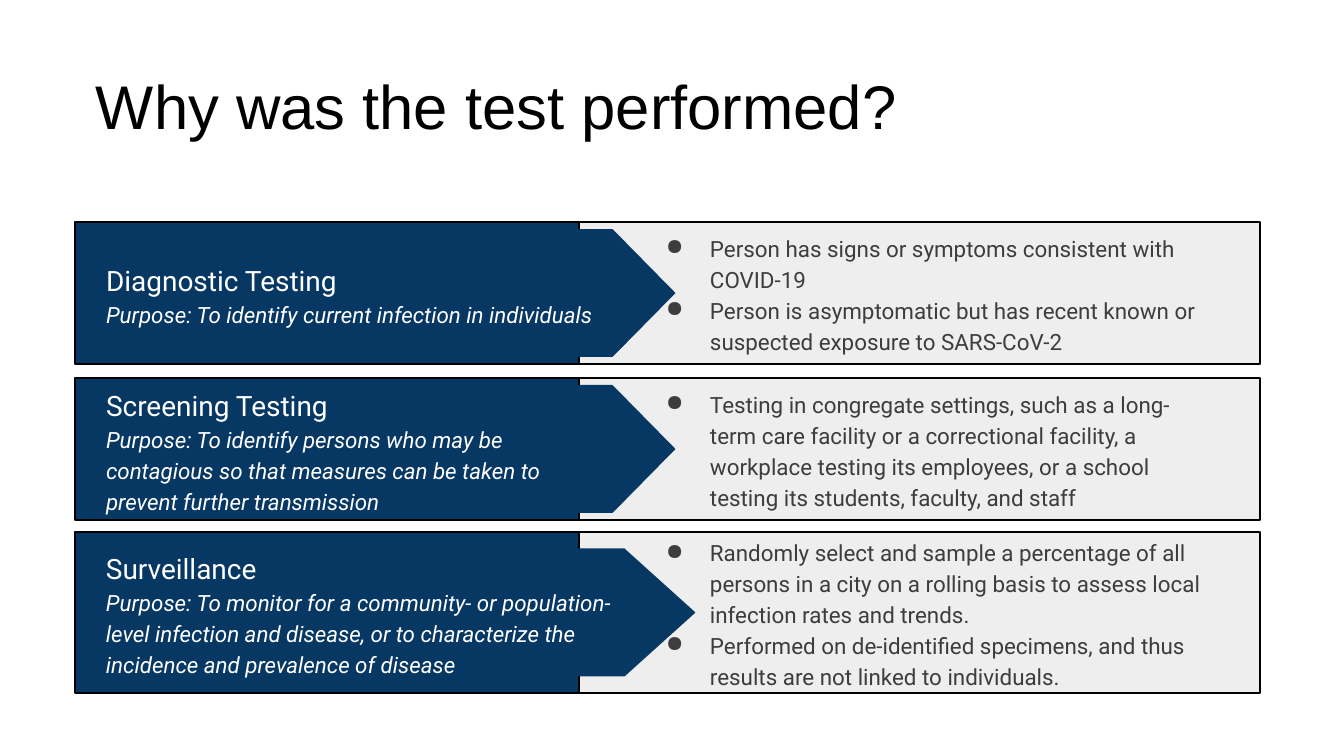
from lxml import etree
from pptx import Presentation
from pptx.dml.color import RGBColor
from pptx.enum.shapes import MSO_SHAPE
from pptx.enum.text import MSO_ANCHOR
from pptx.oxml.ns import qn
from pptx.util import Emu, Pt

RECTANGLE = MSO_SHAPE.RECTANGLE
POINTER = MSO_SHAPE.FLOWCHART_OFFPAGE_CONNECTOR
MIDDLE, TOP = MSO_ANCHOR.MIDDLE, MSO_ANCHOR.TOP

TITLE = "Why was the test performed?"
ROWS = [
    {
        "name": "Diagnostic Testing",
        "purpose": "Purpose: To identify current infection in individuals",
        "reasons": [
            "Person has signs or symptoms consistent with COVID-19",
            "Person is asymptomatic but has recent known or suspected exposure to SARS-CoV-2",
        ],
        "top": 222, "height": 142, "pointer": 315, "label": (517, 110),
    },
    {
        "name": "Screening Testing",
        "purpose": "Purpose: To identify persons who may be contagious so that "
                   "measures can be taken to prevent further transmission",
        "reasons": [
            "Testing in congregate settings, such as a long-term care facility or a correctional "
            "facility, a workplace testing its employees, or a school testing its students, "
            "faculty, and staff",
        ],
        "top": 378, "height": 142, "pointer": 315, "label": (517, 110),
    },
    {
        "name": "Surveillance",
        "purpose": "Purpose: To monitor for a community- or population-level infection and disease, "
                   "or to characterize the incidence and prevalence of disease",
        "reasons": [
            "Randomly select and sample a percentage of all persons in a city on a rolling basis "
            "to assess local infection rates and trends.",
            "Performed on de-identified specimens, and thus results are not linked to individuals.",
        ],
        "top": 532, "height": 161, "pointer": 355, "label": (538, 124),
    },
]
COLORS = {"navy": "073763", "panel": "EEEEEE", "black": "000000", "white": "FFFFFF", "gray": "3D3D3D"}
POINTER_CENTER, POINTER_HEIGHT = 518, 128


def px(length):
    return Emu(round(length * 914400 / 134.4))


def color(name):
    return RGBColor.from_string(COLORS[name])


def add_block(kind, left, top, width, height, fill, outlined=True):
    block = slide.shapes.add_shape(kind, px(left), px(top), px(width), px(height))
    block.shadow.inherit = False
    block.fill.solid()
    block.fill.fore_color.rgb = color(fill)
    if outlined:
        block.line.color.rgb = color("black")
        block.line.width = Pt(0.75)
    else:
        block.line.fill.background()
    return block


def add_text(left, top, width, height, lines, ink, typeface, spacing, insets, anchor, bulleted=False):
    frame = slide.shapes.add_textbox(px(left), px(top), px(width), px(height)).text_frame
    frame.word_wrap = True
    frame.vertical_anchor = anchor
    frame.margin_left = frame.margin_right = px(insets[0])
    frame.margin_top = frame.margin_bottom = px(insets[1])
    for index, (text, size, italic) in enumerate(lines):
        paragraph = frame.add_paragraph() if index else frame.paragraphs[0]
        paragraph.text = text
        paragraph.line_spacing = spacing
        if bulleted:
            add_bullet(paragraph, ink)
        font = paragraph.font
        font.name, font.size, font.italic = typeface, Pt(size), italic
        font.color.rgb = color(ink)


def add_bullet(paragraph, ink):
    properties = paragraph._p.get_or_add_pPr()
    properties.set("marL", str(px(67)))
    properties.set("indent", str(-px(44)))
    bullet_color = etree.SubElement(properties, qn("a:buClr"))
    etree.SubElement(bullet_color, qn("a:srgbClr")).set("val", COLORS[ink])
    etree.SubElement(properties, qn("a:buChar")).set("char", "●")


presentation = Presentation()
presentation.slide_width, presentation.slide_height = px(1344), px(756)
slide = presentation.slides.add_slide(presentation.slide_layouts[6])

add_text(87, 63, 1159, 94, [(TITLE, 33, False)], "black", "Arial", 0.9, (9, 5), MIDDLE)

for row in ROWS:
    top, height = row["top"], row["height"]
    center = top + height / 2
    add_block(RECTANGLE, 500, top, 760, height, "panel")
    add_block(RECTANGLE, 75, top, 504, height, "navy")
    length = row["pointer"]
    pointer = add_block(POINTER, POINTER_CENTER - POINTER_HEIGHT / 2, center - length / 2,
                        POINTER_HEIGHT, length, "navy", outlined=False)
    pointer.rotation = 270
    label_width, label_height = row["label"]
    add_text(93, center - label_height / 2, label_width, label_height,
             [(row["name"], 15, False), (row["purpose"], 12, True)],
             "white", "Roboto", 1.15, (13, 13), MIDDLE)
    add_text(630, top, 591, height, [(reason, 12, False) for reason in row["reasons"]],
             "gray", "Roboto", 1.15, (13, 13), MIDDLE, bulleted=True)

presentation.save("out.pptx")
